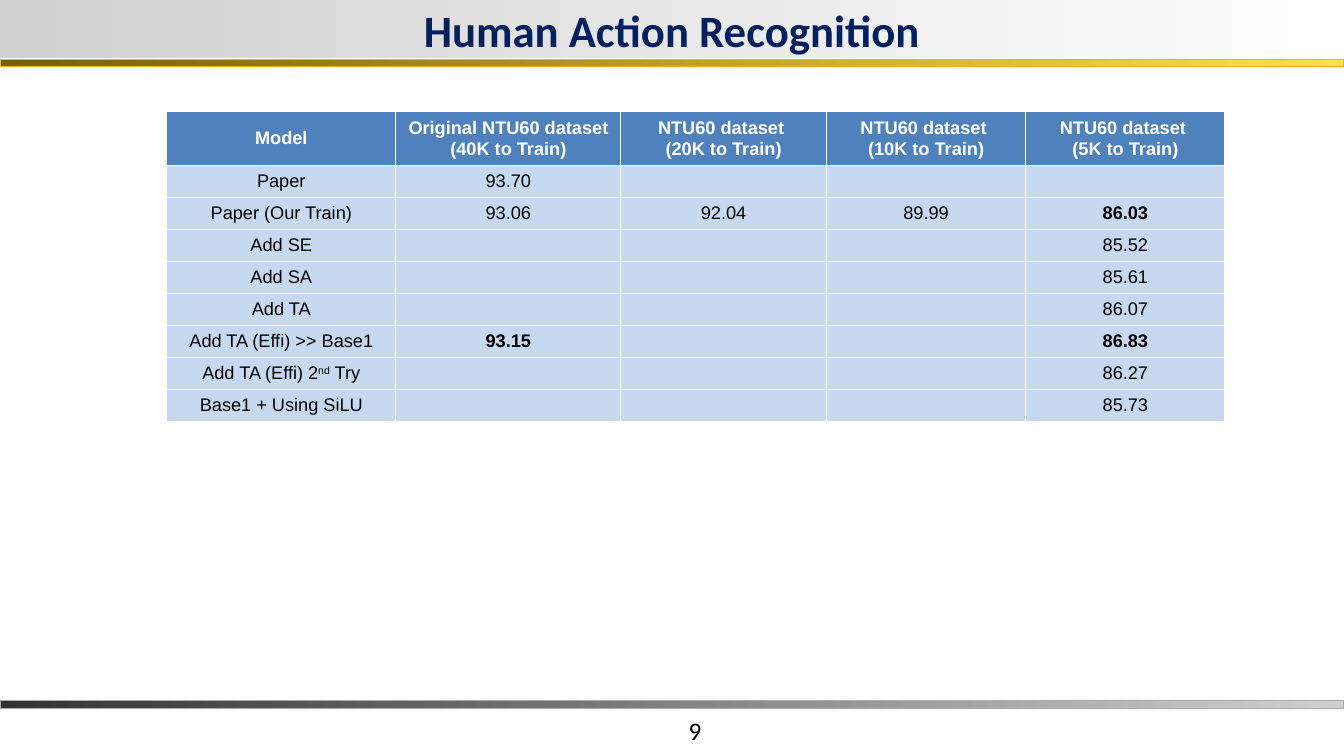
from pptx import Presentation
from pptx.dml.color import RGBColor
from pptx.enum.shapes import MSO_SHAPE
from pptx.enum.text import MSO_ANCHOR, PP_ALIGN
from pptx.util import Pt

RECTANGLE = MSO_SHAPE.RECTANGLE
MIDDLE = MSO_ANCHOR.MIDDLE
CENTER = PP_ALIGN.CENTER


def color(hex_string):
    return RGBColor.from_string(hex_string)


def style(paragraph, font_name, size, hex_string, bold=False):
    paragraph.alignment = CENTER
    font = paragraph.font
    font.name, font.size, font.bold = font_name, Pt(size), bold
    font.color.rgb = color(hex_string)


prs = Presentation()
prs.slide_width, prs.slide_height = Pt(960), Pt(540)
slide = prs.slides.add_slide(prs.slide_layouts[6])

# Header band, footer rule and gold rule: top, height, gradient ends, outline
bands = [
    (0, 41.8, "D0D0D0", "FFFFFF", None),
    (500.4, 5.4, "333333", "D0D0D0", "ABABAB"),
    (42.2, 5.6, "766000", "FFDE53", "E8BC00"),
]
for top, height, start, end, outline in bands:
    band = slide.shapes.add_shape(RECTANGLE, 0, Pt(top), Pt(960), Pt(height))
    band.shadow.inherit = False
    band.fill.gradient()
    band.fill.gradient_angle = 0
    for stop, position, stop_color in zip(band.fill.gradient_stops, (0, 1), (start, end)):
        stop.position = position
        stop.color.rgb = color(stop_color)
    if outline:
        band.line.color.rgb = color(outline)
        band.line.width = Pt(0.75)
    else:
        band.line.fill.background()

# Title and page number
labels = [
    ("Human Action Recognition", 0, 0, 960, 41.8, 32, "002060", True),
    ("9", 384.5, 507, 224, 28.8, 18, "000000", False),
]
for text, left, top, width, height, size, text_color, bold in labels:
    label = slide.shapes.add_textbox(Pt(left), Pt(top), Pt(width), Pt(height)).text_frame
    label.word_wrap = True
    label.vertical_anchor = MIDDLE
    label.text = text
    style(label.paragraphs[0], "Calibri", size, text_color, bold)

# Accuracy table
results = [
    ["Model", "Original NTU60 dataset (40K to Train)", "NTU60 dataset \n(20K to Train)",
     "NTU60 dataset \n(10K to Train)", "NTU60 dataset \n(5K to Train)"],
    ["Paper", "93.70", "", "", ""],
    ["Paper (Our Train)", "93.06", "92.04", "89.99", "86.03"],
    ["Add SE", "", "", "", "85.52"],
    ["Add SA", "", "", "", "85.61"],
    ["Add TA", "", "", "", "86.07"],
    ["Add TA (Effi) >> Base1", "93.15", "", "", "86.83"],
    ["Add TA (Effi) 2nd Try", "", "", "", "86.27"],
    ["Base1 + Using SiLU", "", "", "", "85.73"],
]
highlights = {"86.03", "93.15", "86.83"}
column_widths = [163.8, 160.6, 146.9, 142.4, 142.4]
header_height, row_height = 37.4, 22.2

table = slide.shapes.add_table(
    len(results), len(column_widths), Pt(119), Pt(79.7), Pt(sum(column_widths)),
    Pt(header_height + row_height * (len(results) - 1))).table
table.horz_banding = False
for column, width in zip(table.columns, column_widths):
    column.width = Pt(width)

for r, row in enumerate(results):
    is_header = r == 0
    table.rows[r].height = Pt(header_height if is_header else row_height)
    for c, text in enumerate(row):
        cell = table.cell(r, c)
        cell.vertical_anchor = MIDDLE
        cell.fill.solid()
        cell.fill.fore_color.rgb = color("4F81BD" if is_header else "C6D9F1")
        if "2nd" in text:
            # Ordinal suffix as superscript
            before, after = text.split("nd")
            for part in (before, "nd", after):
                run = cell.text_frame.paragraphs[0].add_run()
                run.text = part
                if part == "nd":
                    run.font._element.set("baseline", "30000")
        else:
            cell.text = text
        for paragraph in cell.text_frame.paragraphs:
            style(paragraph, "Arial", 13, "FFFFFF" if is_header else "000000",
                  is_header or text in highlights)
            if not text:
                # Keeps empty cells from stretching the row
                paragraph._p.get_or_add_endParaRPr().set("sz", "1300")

prs.save("out.pptx")
